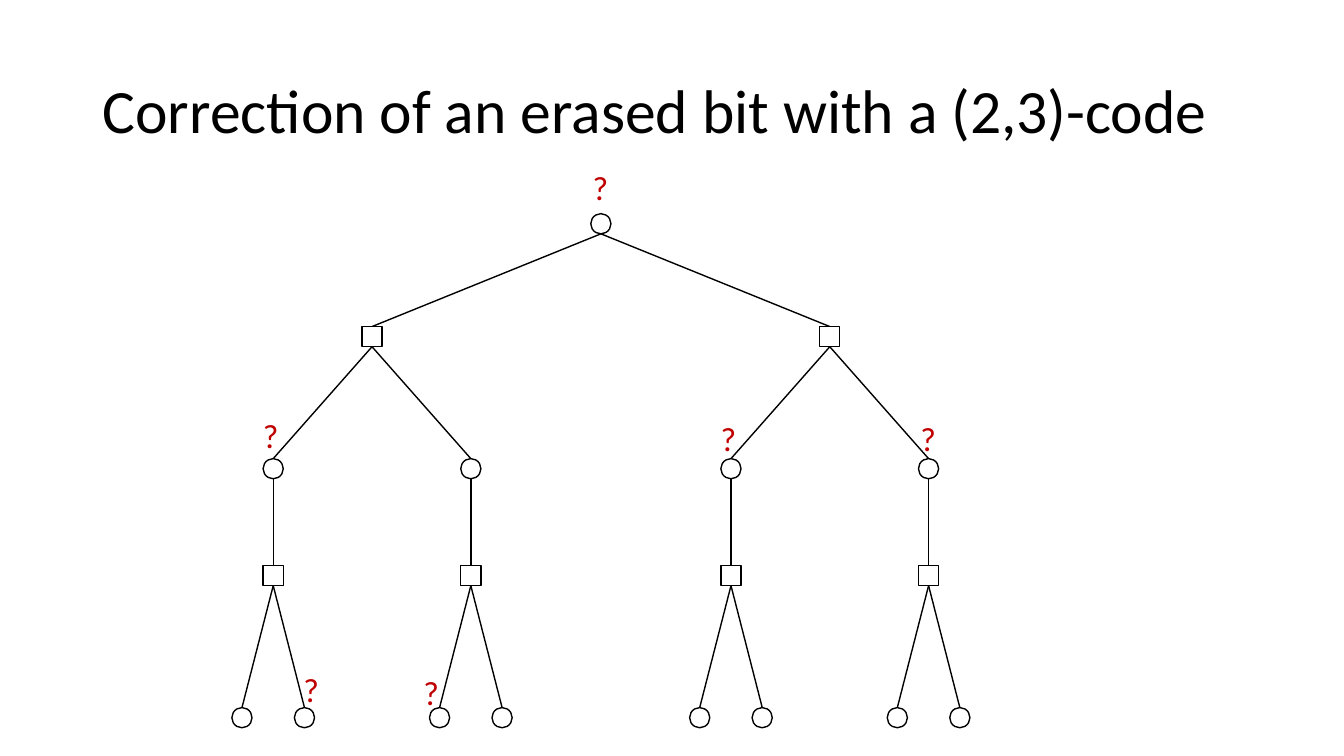
import pptx
import pptx.util
import pptx.dml.color
import pptx.enum.shapes
import pptx.enum.text
import pptx.oxml

Inches = pptx.util.Inches
Pt = pptx.util.Pt
SHAPE = pptx.enum.shapes.MSO_SHAPE

TITLE = "Correction of an erased bit with a (2,3)-code"
FONT = "Calibri"
BLACK, WHITE, RED = "000000", "FFFFFF", "C00000"
NODE = 0.2
ROOT_X = 5.96
LEVELS = [
    {"top": 2.12, "shape": SHAPE.OVAL, "spread": [0]},
    {"top": 3.24, "shape": SHAPE.RECTANGLE, "spread": [-2.27, 2.27]},
    {"top": 4.55, "shape": SHAPE.OVAL, "spread": [-0.98, 0.98]},
    {"top": 5.61, "shape": SHAPE.RECTANGLE, "spread": [0]},
    {"top": 7.02, "shape": SHAPE.OVAL, "spread": [-0.31, 0.31]},
]
ERASURES = [
    {"level": 0, "index": 0, "shift": (-0.18, -0.51)},
    {"level": 2, "index": 0, "shift": (-0.2, -0.48)},
    {"level": 2, "index": 2, "shift": (-0.2, -0.45)},
    {"level": 2, "index": 3, "shift": (-0.18, -0.45)},
    {"level": 4, "index": 1, "shift": (-0.11, -0.43)},
    {"level": 4, "index": 2, "shift": (-0.26, -0.4)},
]


def color(value):
    return pptx.dml.color.RGBColor.from_string(value)


def add_text(slide, text, box, size, ink, wrap):
    shape = slide.shapes.add_textbox(*map(Inches, box))
    frame = shape.text_frame
    frame.text = text
    frame.word_wrap = wrap
    font = frame.paragraphs[0].runs[0].font
    font.name, font.size = FONT, Pt(size)
    font.color.rgb = color(ink)
    return frame


def add_node(slide, kind, center, top):
    shape = slide.shapes.add_shape(
        kind, Inches(center - NODE / 2), Inches(top), Inches(NODE), Inches(NODE))
    shape.shadow.inherit = False
    shape.fill.solid()
    shape.fill.fore_color.rgb = color(WHITE)
    shape.line.color.rgb = color(BLACK)
    shape.line.width = Pt(1)


def add_branch(slide, start, end):
    connector = slide.shapes.add_connector(
        pptx.enum.shapes.MSO_CONNECTOR.STRAIGHT, *map(Inches, start + end))
    connector.line.color.rgb = color(BLACK)
    connector.line.width = Pt(1)
    properties = connector._element.spPr
    properties.append(properties.makeelement(pptx.oxml.ns.qn("a:effectLst"), {}))


def main():
    presentation = pptx.Presentation()
    presentation.slide_width = Inches(13.33)
    presentation.slide_height = Inches(7.5)
    slide = presentation.slides.add_slide(presentation.slide_layouts[6])

    title = add_text(slide, TITLE, (0.92, 0.4, 11.5, 1.45), 44, BLACK, True)
    title.vertical_anchor = pptx.enum.text.MSO_ANCHOR.MIDDLE
    title.paragraphs[0].line_spacing = 0.9

    centers = []
    parents = [ROOT_X]
    for depth, level in enumerate(LEVELS):
        children = []
        for parent in parents:
            for offset in level["spread"]:
                child = parent + offset
                if depth:
                    bottom = LEVELS[depth - 1]["top"] + NODE
                    add_branch(slide, (parent, bottom), (child, level["top"]))
                add_node(slide, level["shape"], child, level["top"])
                children.append(child)
        centers.append(children)
        parents = children

    for erasure in ERASURES:
        depth = erasure["level"]
        across, down = erasure["shift"]
        left = centers[depth][erasure["index"]] + across
        top = LEVELS[depth]["top"] + down
        add_text(slide, "?", (left, top, 0.36, 0.5), 24, RED, False)

    presentation.save("out.pptx")


if __name__ == "__main__":
    main()
